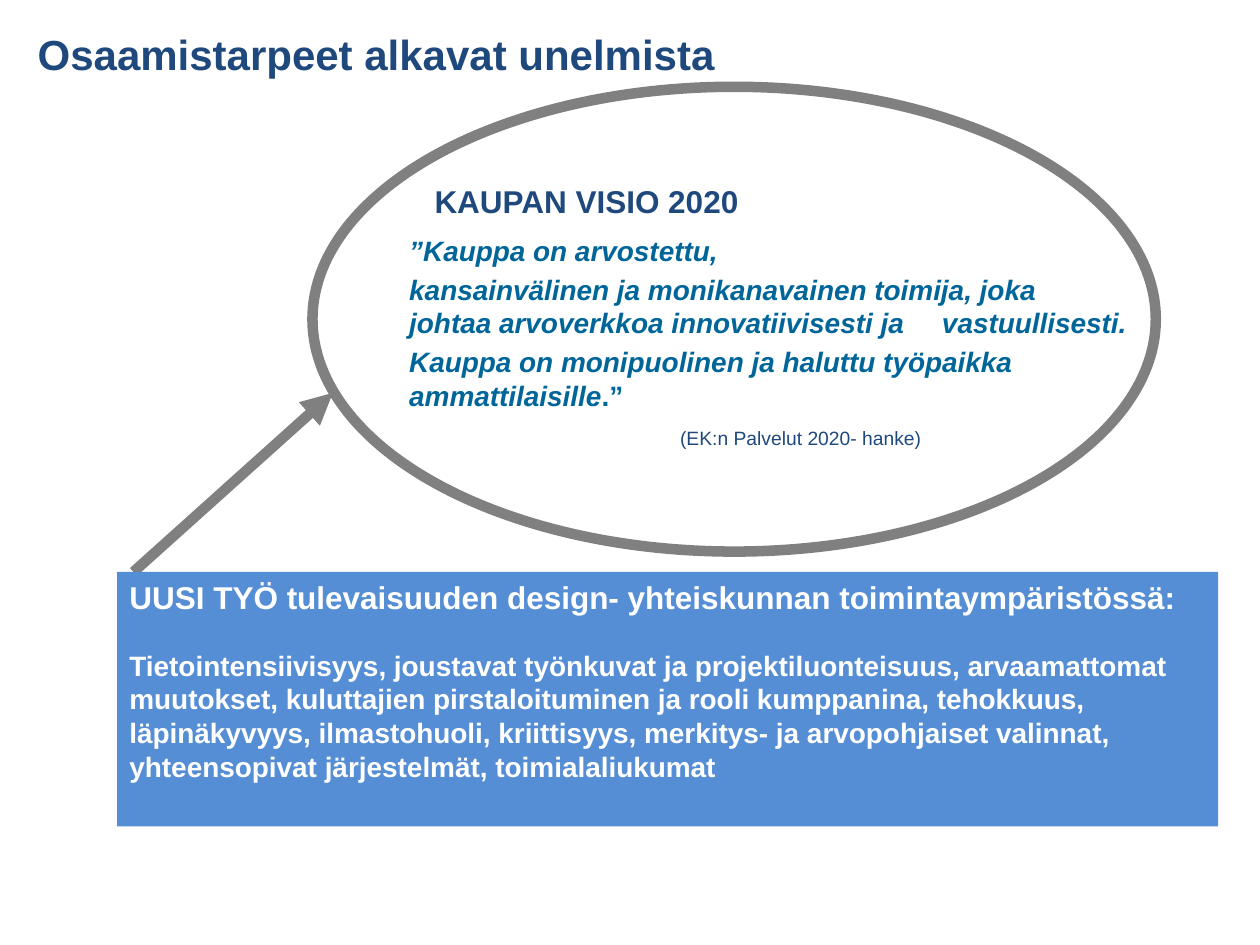
import pptx
import pptx.util
import pptx.dml.color
import pptx.enum.shapes
import pptx.enum.text
import pptx.oxml.ns
from lxml import etree

Cm, Pt = pptx.util.Cm, pptx.util.Pt
RGBColor = pptx.dml.color.RGBColor
NAVY = RGBColor(0x1F, 0x49, 0x7D)
TEAL = RGBColor(0x00, 0x66, 0x99)
GREY = RGBColor(0x80, 0x80, 0x80)
BLUE = RGBColor(0x55, 0x8E, 0xD5)
WHITE = RGBColor(0xFF, 0xFF, 0xFF)

TITLE = "Osaamistarpeet alkavat unelmista"
VISION_HEADING = "KAUPAN VISIO 2020"
VISION = [
    "”Kauppa on arvostettu,",
    "kansainvälinen ja monikanavainen toimija, joka\v"
    "johtaa arvoverkkoa innovatiivisesti ja\tvastuullisesti.",
    "Kauppa on monipuolinen ja haluttu työpaikka ammattilaisille",
]
VISION_END = ".”"
SOURCE = "(EK:n Palvelut 2020- hanke)"
WORK_HEADING = "UUSI TYÖ tulevaisuuden design- yhteiskunnan toimintaympäristössä:"
WORK = (
    "Tietointensiivisyys, joustavat työnkuvat ja projektiluonteisuus, arvaamattomat "
    "muutokset, kuluttajien pirstaloituminen ja rooli kumppanina, tehokkuus, "
    "läpinäkyvyys, ilmastohuoli, kriittisyys, merkitys- ja arvopohjaiset valinnat, "
    "yhteensopivat järjestelmät, toimialaliukumat"
)

ELLIPSE = (6.3, 1.75, 17, 9.37)
WORK_BOX = (2.36, 11.53, 22.2, 5.13)
ARROW = (2.69, 11.53, 6.71, 7.92)
TITLE_BOX = (0.51, 0.46, 17.91, 1.3)
HEADING_BOX = (8.51, 3.55, 6.81, 1.02)
VISION_BOX = (8, 4.58, 15.01, 4.62)
SOURCE_BOX = (13.46, 8.46, 6.1, 0.76)
VISION_TAB = 10.74


def cm(values):
    return [Cm(v) for v in values]


def add_xml(parent, tag, **attributes):
    return etree.SubElement(parent, pptx.oxml.ns.qn(tag), attributes)


def style(p, size, color, bold=True, italic=False):
    for r in p.runs:
        r.font.name = "Arial"
        r.font.size = Pt(size)
        r.font.bold = bold
        r.font.italic = italic
        r.font.color.rgb = color


def add_text(s, box, text):
    tf = s.shapes.add_textbox(*cm(box)).text_frame
    tf.word_wrap = True
    tf.text = text
    return tf


def add_shape(s, kind, box):
    sp = s.shapes.add_shape(kind, *cm(box))
    sp.shadow.inherit = False
    return sp


def main():
    prs = pptx.Presentation()
    prs.slide_width, prs.slide_height = cm((25.4, 19.05))
    s = prs.slides.add_slide(prs.slide_layouts[6])
    shapes = pptx.enum.shapes.MSO_SHAPE

    ellipse = add_shape(s, shapes.OVAL, ELLIPSE)
    ellipse.fill.background()
    ellipse.line.color.rgb = GREY
    ellipse.line.width = Pt(6)

    tf = add_text(s, VISION_BOX, "\n".join(VISION))
    for i, p in enumerate(tf.paragraphs):
        if i:
            p.space_before = Pt(3)
        style(p, 16, TEAL, italic=True)
    tabs = add_xml(tf.paragraphs[1]._p.get_or_add_pPr(), "a:tabLst")
    add_xml(tabs, "a:tab", pos=str(Cm(VISION_TAB)), algn="l")
    r = tf.paragraphs[-1].add_run()
    r.text = VISION_END
    style(tf.paragraphs[-1], 16, TEAL, italic=True)
    r.font.italic = False

    arrow = s.shapes.add_connector(pptx.enum.shapes.MSO_CONNECTOR.STRAIGHT, *cm(ARROW))
    arrow.line.color.rgb = GREY
    arrow.line.width = Pt(6)
    add_xml(arrow.line._get_or_add_ln(), "a:tailEnd", type="triangle")
    add_xml(arrow._element.spPr, "a:effectLst")

    for box, text, size, bold in (
        (TITLE_BOX, TITLE, 24, True),
        (SOURCE_BOX, SOURCE, 11, False),
        (HEADING_BOX, VISION_HEADING, 18, True),
    ):
        style(add_text(s, box, text).paragraphs[0], size, NAVY, bold)

    work = add_shape(s, shapes.RECTANGLE, WORK_BOX)
    work.fill.solid()
    work.fill.fore_color.rgb = BLUE
    work.line.fill.background()
    tf = work.text_frame
    tf.word_wrap = True
    tf.vertical_anchor = pptx.enum.text.MSO_ANCHOR.TOP
    tf.text = WORK_HEADING + "\n" + WORK
    for p, size in zip(tf.paragraphs, (18, 16)):
        p.alignment = pptx.enum.text.PP_ALIGN.LEFT
        style(p, size, WHITE)
    tf.paragraphs[1].space_before = Pt(18.5)

    prs.save("out.pptx")


if __name__ == "__main__":
    main()
